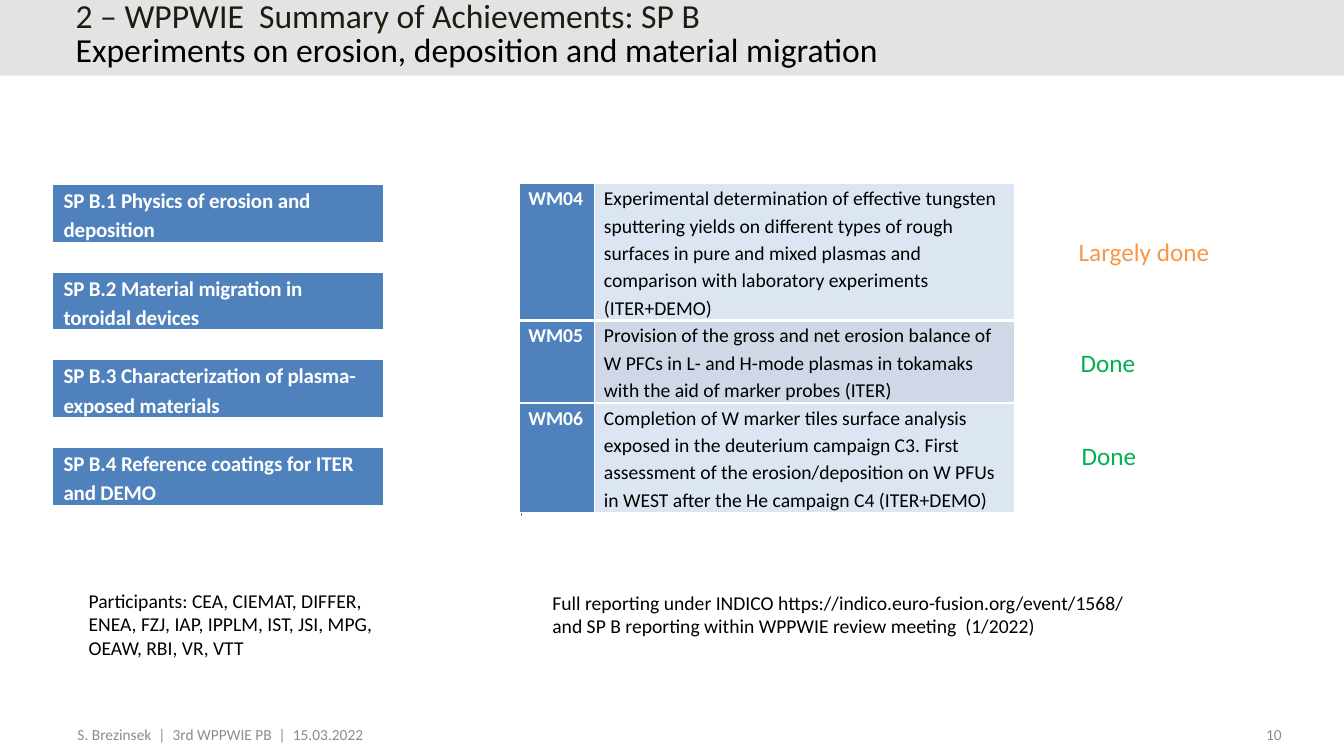
from dataclasses import dataclass

from lxml.etree import SubElement
from pptx import Presentation
from pptx.dml.color import RGBColor
from pptx.enum.shapes import MSO_CONNECTOR as Connector, MSO_SHAPE as Preset
from pptx.enum.text import MSO_ANCHOR as Anchor, MSO_AUTO_SIZE as AutoSize, PP_ALIGN as Align
from pptx.oxml.ns import qn
from pptx.slide import Slide
from pptx.table import Table, _Cell as Cell
from pptx.text.text import _Paragraph as Paragraph
from pptx.util import Inches, Pt

BLUE, PALE, LILAC = "4F81BD", "DCE6F2", "D0D8E8"
WHITE, BLACK, GREY = "FFFFFF", "000000", "8C8C8C"
GREEN, ORANGE = "00B050", "F79646"


@dataclass
class Label:
    left: float
    top: float
    width: float
    height: float
    lines: tuple[str, ...]
    size: float = 14
    color: str = BLACK
    align: Align = Align.LEFT
    wrap: bool = True


@dataclass
class Milestone:
    code: str
    text: str
    height: float
    fill: str
    bottom_border: float = 1


LABELS = [
    Label(12.02, 7.14, 0.79, 0.22, ("10",), 11, GREY, Align.RIGHT),
    Label(0.67, 7.14, 3.8, 0.36, ("S. Brezinsek  |  3rd WPPWIE PB  |  15.03.2022",), 11, GREY),
    Label(0.78, 5.79, 3.02, 0.81,
          ("Participants: CEA, CIEMAT, DIFFER, ENEA, FZJ, IAP, IPPLM, IST, JSI, MPG, "
           "OEAW, RBI, VR, VTT",)),
    Label(5.38, 5.81, 6.14, 0.57,
          ("Full reporting under INDICO https://indico.euro-fusion.org/event/1568/",
           "and SP B reporting within WPPWIE review meeting  (1/2022)")),
    Label(10.6, 2.3, 1.51, 0.4, ("Largely done",), 18, ORANGE, wrap=False),
    Label(10.62, 3.4, 0.75, 0.4, ("Done",), 18, GREEN, wrap=False),
    Label(10.63, 4.32, 0.75, 0.4, ("Done",), 18, GREEN, wrap=False),
]

SUBPROJECTS = [
    "SP B.1 Physics of erosion and deposition",
    "SP B.2 Material migration in toroidal devices",
    "SP B.3 Characterization of plasma-exposed materials",
    "SP B.4 Reference coatings for ITER and DEMO",
]
SUBPROJECT_TOP, SUBPROJECT_PITCH = 1.83, 0.87

MILESTONES = [
    Milestone("WM04", "Experimental determination of effective tungsten sputtering yields on "
              "different types of rough surfaces in pure and mixed plasmas and comparison "
              "with laboratory experiments (ITER+DEMO)", 1.35, PALE, 3),
    Milestone("WM05", "Provision of the gross and net erosion balance of W PFCs in L- and "
              "H-mode plasmas in tokamaks with the aid of marker probes (ITER)", 0.8, LILAC),
    Milestone("WM06", "Completion of W marker tiles surface analysis exposed in the deuterium "
              "campaign C3. First assessment of the erosion/deposition on W PFUs in WEST "
              "after the He campaign C4 (ITER+DEMO)", 1.07, PALE),
]


def rgb(color: str) -> RGBColor:
    return RGBColor.from_string(color)


def apply_format(target: object, values: dict) -> None:
    for name, value in values.items():
        setattr(target, name, value)


def add_run(paragraph: Paragraph, text: str, size: float, color: str, bold: bool = False):
    run = paragraph.add_run()
    run.text = text
    apply_format(run.font, {"name": "Calibri", "size": Pt(size), "bold": bold})
    run.font.color.rgb = rgb(color)
    return run


def add_label(slide: Slide, label: Label) -> None:
    box = slide.shapes.add_textbox(Inches(label.left), Inches(label.top),
                                   Inches(label.width), Inches(label.height))
    frame = box.text_frame
    frame.word_wrap = label.wrap
    for index, line in enumerate(label.lines):
        paragraph = frame.add_paragraph() if index else frame.paragraphs[0]
        paragraph.alignment = label.align
        add_run(paragraph, line, label.size, label.color)


def add_plain_table(slide: Slide, left: float, top: float,
                    widths: list[float], heights: list[float]) -> Table:
    table = slide.shapes.add_table(
        len(heights), len(widths), Inches(left), Inches(top),
        Inches(sum(widths)), Inches(sum(heights))).table
    apply_format(table, {"first_row": False, "horz_banding": False})
    for column, width in zip(table.columns, widths):
        column.width = Inches(width)
    for row, height in zip(table.rows, heights):
        row.height = Inches(height)
    return table


def format_cell(cell: Cell, fill: str, margin: float, bottom_border: float) -> Paragraph:
    """Draw white borders and a fill, and return the paragraph to be written."""
    properties = cell._tc.get_or_add_tcPr()
    for side, width in {"L": 1, "R": 1, "T": 1, "B": bottom_border}.items():
        border = SubElement(properties, qn(f"a:ln{side}"), w=str(Pt(width)))
        SubElement(SubElement(border, qn("a:solidFill")), qn("a:srgbClr"), val=WHITE)
    cell.fill.solid()
    cell.fill.fore_color.rgb = rgb(fill)
    apply_format(cell, {"margin_left": Inches(margin), "margin_right": Inches(margin),
                        "margin_top": 0, "margin_bottom": 0})
    paragraph = cell.text_frame.paragraphs[0]
    paragraph.line_spacing = 1.15
    return paragraph


def add_subproject(slide: Slide, top: float, text: str) -> None:
    table = add_plain_table(slide, 0.52, top, [3.28], [0.57])
    paragraph = format_cell(table.cell(0, 0), BLUE, 0.11, 3)
    apply_format(paragraph, {"space_before": Pt(2.4), "space_after": Pt(2.4)})
    run = add_run(paragraph, text, 15, WHITE, True)
    run.font._element.set("spc", "-10")


def add_milestones(slide: Slide) -> None:
    table = add_plain_table(slide, 5.15, 1.82, [0.75, 4.16],
                            [milestone.height for milestone in MILESTONES])
    for row, milestone in enumerate(MILESTONES):
        columns = [(milestone.code, BLUE, WHITE, True),
                   (milestone.text, milestone.fill, BLACK, False)]
        for column, (text, fill, color, bold) in enumerate(columns):
            paragraph = format_cell(table.cell(row, column), fill, 0.07,
                                    milestone.bottom_border)
            paragraph.space_after = Pt(3)
            paragraph._p.get_or_add_pPr().set("marL", str(Inches(0.02)))
            add_run(paragraph, text, 14, color, bold)


def add_header(slide: Slide, width: int) -> None:
    band = slide.shapes.add_shape(Preset.RECTANGLE, 0, 0, width, Inches(0.75))
    band.shadow.inherit = False
    band.fill.solid()
    band.fill.fore_color.rgb = rgb("E3E3E3")
    band.line.fill.background()
    slide.shapes._spTree.insert(2, band._element)

    title = slide.shapes.title
    apply_format(title, {"left": Inches(0.65), "top": Inches(0.1),
                         "width": Inches(11.51), "height": Inches(0.5)})
    apply_format(title.text_frame, {"auto_size": AutoSize.NONE, "word_wrap": True,
                                    "vertical_anchor": Anchor.MIDDLE})
    paragraph = title.text_frame.paragraphs[0]
    apply_format(paragraph, {"alignment": Align.LEFT, "line_spacing": Pt(24)})
    add_run(paragraph, "2 – WPPWIE  Summary of Achievements: SP B ", 24, "1E1C11")
    paragraph.add_line_break()
    add_run(paragraph, "Experiments on erosion, deposition and material migration", 24, BLACK)


def add_milestone_line(slide: Slide) -> None:
    line = slide.shapes.add_connector(Connector.STRAIGHT, Inches(5.17), Inches(1.83),
                                      Inches(5.17), Inches(5.12))
    line.line.color.rgb = rgb("4B7EBC")
    line.line.width = Pt(0.75)
    SubElement(line._element.spPr, qn("a:effectLst"))


def main() -> None:
    presentation = Presentation()
    apply_format(presentation, {"slide_width": Inches(13.33), "slide_height": Inches(7.5)})
    slide = presentation.slides.add_slide(presentation.slide_layouts.get_by_name("Title Only"))
    add_header(slide, presentation.slide_width)
    for index, text in enumerate(SUBPROJECTS):
        add_subproject(slide, SUBPROJECT_TOP + index * SUBPROJECT_PITCH, text)
    add_milestone_line(slide)
    add_milestones(slide)
    for label in LABELS:
        add_label(slide, label)
    presentation.save("out.pptx")


if __name__ == "__main__":
    main()
